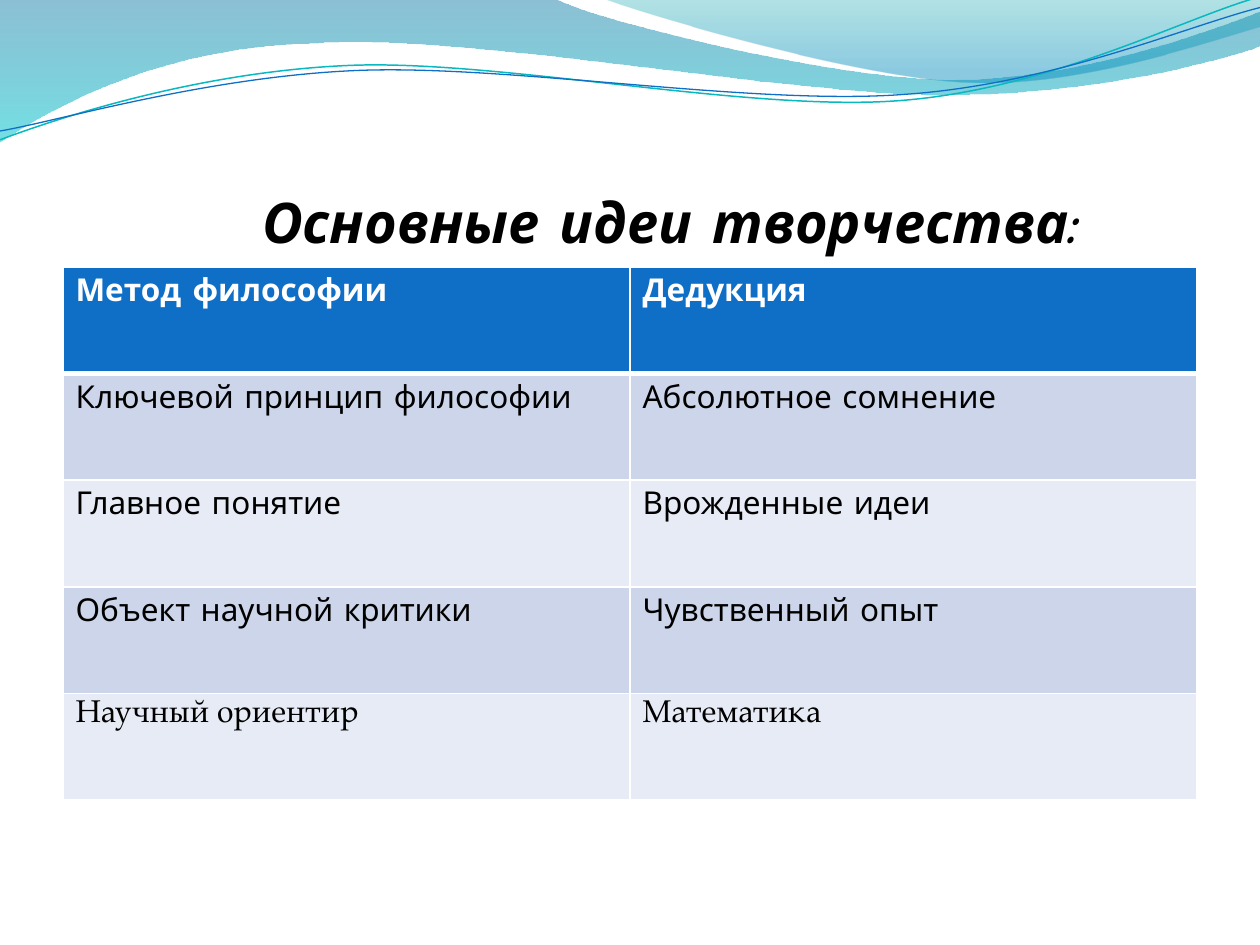
from lxml import etree
from pptx import Presentation
from pptx.dml.color import RGBColor
from pptx.enum.text import MSO_ANCHOR
from pptx.oxml.ns import qn
from pptx.util import Inches, Pt

BOTTOM = MSO_ANCHOR.BOTTOM
HEADING_FONT = "Comic Neue"
BODY_FONT = "TeX Gyre Pagella"
BLUE, WHITE, BLACK = "0F6FC6", "FFFFFF", "000000"
BANDS = ("CCD5EA", "E7EBF5")

# Each wave is a start point followed by lines (one point) and Bézier curves (three points).
LARGE_WAVE = [
    [(0, 0)], [(4.4, -0.01)],
    [(4.76, 0.17), (6.64, 0.63), (7.58, 0.63)],
    [(8.53, 0.63), (9.58, 0.26), (10, 0.09)],
    [(10.01, 0.36)],
    [(9.83, 0.44), (8.7, 0.76), (7.46, 0.75)],
    [(6.22, 0.75), (3.82, 0.28), (2.57, 0.34)],
    [(1.29, 0.36), (0.46, 0.83), (-0.01, 1.13)],
]
SMALL_WAVE = [
    [(4.79, -0.01)],
    [(5.09, 0.11), (6.82, 0.62), (7.69, 0.65)],
    [(8.56, 0.69), (9.61, 0.32), (10, 0.21)],
    [(10, 0)],
]
TEAL_LINE = [
    [(0, 1.11)],
    [(0.48, 0.93), (1.58, 0.57), (2.77, 0.52)],
    [(3.95, 0.47), (5.93, 0.89), (7.13, 0.8)],
    [(8.33, 0.71), (9.38, 0.15), (9.98, -0.02)],
]
BLUE_LINE = [
    [(0, 1.04)],
    [(0.47, 0.96), (1.64, 0.61), (2.83, 0.56)],
    [(4.03, 0.51), (5.97, 0.84), (7.17, 0.75)],
    [(8.36, 0.67), (9.41, 0.21), (10, 0.06)],
]
ROWS = [
    ("Метод философии", "Дедукция"),
    ("Ключевой принцип философии", "Абсолютное сомнение"),
    ("Главное понятие", "Врожденные идеи"),
    ("Объект научной критики", "Чувственный опыт"),
    ("Научный ориентир", "Математика"),
]


def color(value):
    return RGBColor.from_string(value)


def bend(shape, segments):
    """Join the three straight lines of each three-point segment into one Bézier curve."""
    lines = iter(list(shape._element.iter(qn("a:lnTo"))))
    for segment in segments:
        first, *others = [next(lines) for _ in segment]
        if others:
            first.tag = qn("a:cubicBezTo")
            for line in others:
                first.append(line[0])
                line.getparent().remove(line)


def write(frame, text, size=18, font=HEADING_FONT, fill=BLACK, bold=False, italic=False):
    paragraph = frame.paragraphs[0]
    run = paragraph.add_run()
    run.text = text
    run.font.size = Pt(size)
    run.font.name = font
    run.font.bold = bold
    run.font.italic = italic
    run.font.color.rgb = color(fill)
    return paragraph


def set_border(cell, side, width):
    line = etree.SubElement(cell._tc.get_or_add_tcPr(), qn(f"a:ln{side}"), w=str(Pt(width)))
    solid = etree.SubElement(line, qn("a:solidFill"))
    etree.SubElement(solid, qn("a:srgbClr"), val=WHITE)


class SlideBuilder:
    def __init__(self, slide):
        self.slide = slide

    def freeform(self, outline, close):
        start, *points = [(Inches(x), Inches(y)) for segment in outline for x, y in segment]
        builder = self.slide.shapes.build_freeform(*start)
        builder.add_line_segments(points, close=close)
        shape = builder.convert_to_shape()
        bend(shape, outline[1:])
        shape.shadow.inherit = False
        return shape

    def wave(self, outline, stops):
        """Draw a filled wave; each stop is position, colour and opacity in percent."""
        shape = self.freeform(outline, True)
        shape.line.fill.background()
        shape.fill.gradient()
        shape.fill.gradient_angle = 270
        for stop, (position, value, opacity) in zip(shape.fill.gradient_stops, stops):
            stop.position = position
            stop.color.rgb = color(value)
            rgb = stop._gs.find(qn("a:srgbClr"))
            etree.SubElement(rgb, qn("a:alpha"), val=str(opacity * 1000))

    def curve(self, outline, value, width):
        shape = self.freeform(outline, False)
        shape.fill.background()
        shape.line.color.rgb = color(value)
        shape.line.width = Pt(width)

    def title(self, text):
        box = self.slide.shapes.add_textbox(Inches(0.5), Inches(0.77), Inches(9), Inches(1.25))
        frame = box.text_frame
        frame.word_wrap = True
        frame.vertical_anchor = BOTTOM
        frame.margin_left = frame.margin_right = frame.margin_bottom = 0
        paragraph = write(frame, text, size=32, bold=True, italic=True)
        paragraph._p.get_or_add_pPr().set("marL", str(Inches(1.58)))

    def table(self, rows):
        table = self.slide.shapes.add_table(
            len(rows), len(rows[0]), Inches(0.5), Inches(2.12), Inches(9), Inches(4.23)).table
        for row_index, row in enumerate(rows):
            header = row_index == 0
            last = row_index == len(rows) - 1
            for column_index, text in enumerate(row):
                cell = table.cell(row_index, column_index)
                for side in "LRTB":
                    heavy = (row_index, side) in ((0, "B"), (1, "T"))
                    set_border(cell, side, 3 if heavy else 1)
                cell.fill.solid()
                cell.fill.fore_color.rgb = color(BLUE if header else BANDS[(row_index - 1) % 2])
                write(cell.text_frame, text, bold=header, fill=WHITE if header else BLACK,
                      font=BODY_FONT if last else HEADING_FONT)


def main():
    presentation = Presentation()
    presentation.slide_width = Inches(10)
    presentation.slide_height = Inches(7.5)
    builder = SlideBuilder(presentation.slides.add_slide(presentation.slide_layouts[6]))
    builder.wave(LARGE_WAVE, [(0, "0074A1", 45), (1, "00C6CF", 55)])
    builder.wave(SMALL_WAVE, [(0, "00A1A9", 30), (0.8, "008BBF", 45)])
    builder.curve(TEAL_LINE, "0AB8BF", 0.85)
    builder.curve(BLUE_LINE, BLUE, 0.75)
    builder.title("Основные идеи творчества:")
    builder.table(ROWS)
    presentation.save("out.pptx")


if __name__ == "__main__":
    main()
